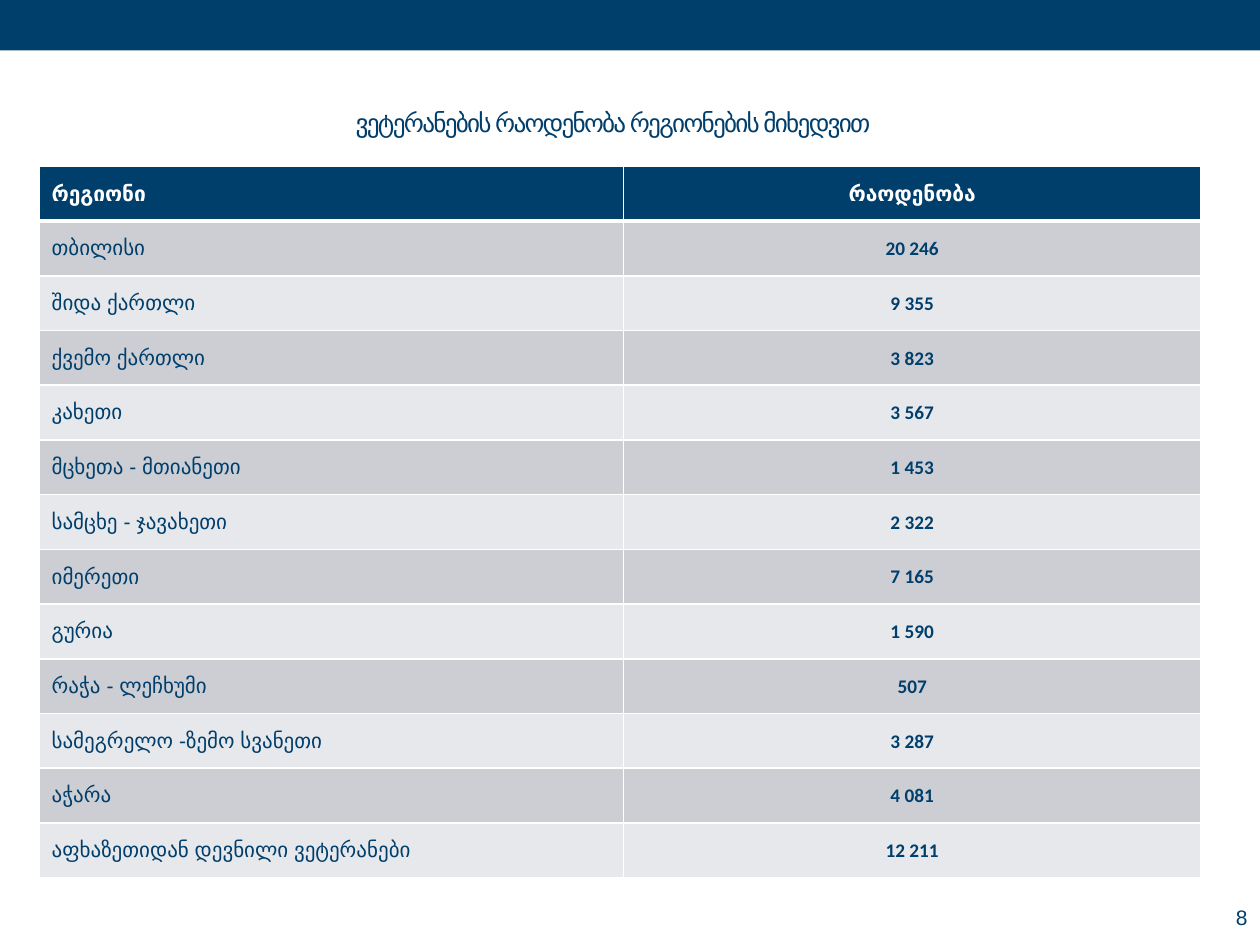
from dataclasses import dataclass

from lxml.etree import SubElement
from pptx import Presentation
from pptx.dml.color import RGBColor
from pptx.enum.shapes import MSO_SHAPE
from pptx.enum.text import MSO_ANCHOR, PP_ALIGN
from pptx.oxml.ns import qn
from pptx.util import Inches, Pt


@dataclass(frozen=True)
class Theme:
    navy: str = "003E6C"
    white: str = "FFFFFF"
    bands: tuple = ("CCCED4", "E7E8EB")
    text_font: str = "Arial"
    number_font: str = "Calibri"
    title_size: float = 14.4
    text_size: int = 12
    number_size: int = 11
    rule: int = 1
    header_rule: int = 3


THEME = Theme()

HEADINGS = ("რეგიონი", "რაოდენობა")
VETERANS = (
    ("თბილისი", "20 246"),
    ("შიდა ქართლი", "9 355"),
    ("ქვემო ქართლი", "3 823"),
    ("კახეთი", "3 567"),
    ("მცხეთა - მთიანეთი", "1 453"),
    ("სამცხე - ჯავახეთი", "2 322"),
    ("იმერეთი", "7 165"),
    ("გურია", "1 590"),
    ("რაჭა - ლეჩხუმი", "507"),
    ("სამეგრელო -ზემო სვანეთი", "3 287"),
    ("აჭარა", "4 081"),
    ("აფხაზეთიდან დევნილი ვეტერანები", "12 211"),
)


def write(frame, text, align, size=THEME.text_size, font=THEME.text_font,
          color=THEME.navy, bold=False):
    paragraph = frame.paragraphs[0]
    paragraph.alignment = align
    run = paragraph.add_run()
    run.text = text
    run.font.size = Pt(size)
    run.font.name = font
    run.font.bold = bold
    run.font.color.rgb = RGBColor.from_string(color)
    return run


def add_frame(slide, left, top, width, height, anchor):
    frame = slide.shapes.add_textbox(left, top, width, height).text_frame
    frame.word_wrap = True
    frame.vertical_anchor = anchor
    return frame


def add_banner(slide, left, top, width, height):
    banner = slide.shapes.add_shape(MSO_SHAPE.RECTANGLE, left, top, width, height)
    banner.shadow.inherit = False
    banner.fill.solid()
    banner.fill.fore_color.rgb = RGBColor.from_string(THEME.navy)
    banner.line.fill.background()


def add_title(slide, left, top, width, height):
    frame = add_frame(slide, left, top, width, height, MSO_ANCHOR.TOP)
    heading = write(frame, "ვეტერანების რაოდენობა რეგიონების მიხედვით",
                    PP_ALIGN.CENTER, THEME.title_size)
    heading.font._element.set("spc", "-100")


def style_cell(cell, color, top_rule, bottom_rule):
    properties = cell._tc.get_or_add_tcPr()
    rules = {"L": THEME.rule, "R": THEME.rule, "T": top_rule, "B": bottom_rule}
    for side, weight in rules.items():
        border = SubElement(properties, qn(f"a:ln{side}"), w=str(Pt(weight)))
        fill = SubElement(border, qn("a:solidFill"))
        SubElement(fill, qn("a:srgbClr"), val=THEME.white)
    cell.fill.solid()
    cell.fill.fore_color.rgb = RGBColor.from_string(color)
    cell.vertical_anchor = MSO_ANCHOR.MIDDLE


def add_veterans_table(slide, left, top, width, height):
    row_count = len(VETERANS) + 1
    table = slide.shapes.add_table(row_count, 2, left, top, width, height).table
    region_width = Inches(4.64)
    table.columns[0].width = region_width
    table.columns[1].width = width - region_width
    for row in table.rows:
        row.height = int(height / row_count)

    for column, (heading, align) in enumerate(
            zip(HEADINGS, (PP_ALIGN.LEFT, PP_ALIGN.CENTER))):
        cell = table.cell(0, column)
        style_cell(cell, THEME.navy, THEME.rule, THEME.header_rule)
        write(cell.text_frame, heading, align, color=THEME.white, bold=True)

    for index, (region, count) in enumerate(VETERANS):
        region_cell, count_cell = table.rows[index + 1].cells
        top_rule = THEME.rule if index else THEME.header_rule
        for cell in (region_cell, count_cell):
            style_cell(cell, THEME.bands[index % 2], top_rule, THEME.rule)
        write(region_cell.text_frame, region, PP_ALIGN.LEFT)
        count_cell.margin_left = count_cell.margin_right = Inches(0.01)
        count_cell.margin_top = Inches(0.01)
        count_cell.margin_bottom = 0
        write(count_cell.text_frame, count, PP_ALIGN.CENTER,
              THEME.number_size, THEME.number_font, bold=True)


def add_page_number(slide, left, top, width, height):
    frame = add_frame(slide, left, top, width, height, MSO_ANCHOR.MIDDLE)
    write(frame, "8", PP_ALIGN.RIGHT)


def main():
    deck = Presentation()
    deck.slide_width = Inches(10)
    deck.slide_height = Inches(7.5)
    slide = deck.slides.add_slide(deck.slide_layouts[6])
    add_banner(slide, 0, 0, deck.slide_width, Inches(0.4))
    add_title(slide, Inches(2.51), Inches(0.8), Inches(4.71), Inches(0.61))
    add_veterans_table(slide, Inches(0.31), Inches(1.32), Inches(9.22), Inches(5.65))
    add_page_number(slide, Inches(8.83), Inches(7.1), Inches(1.17), Inches(0.36))
    deck.save("out.pptx")


if __name__ == "__main__":
    main()
